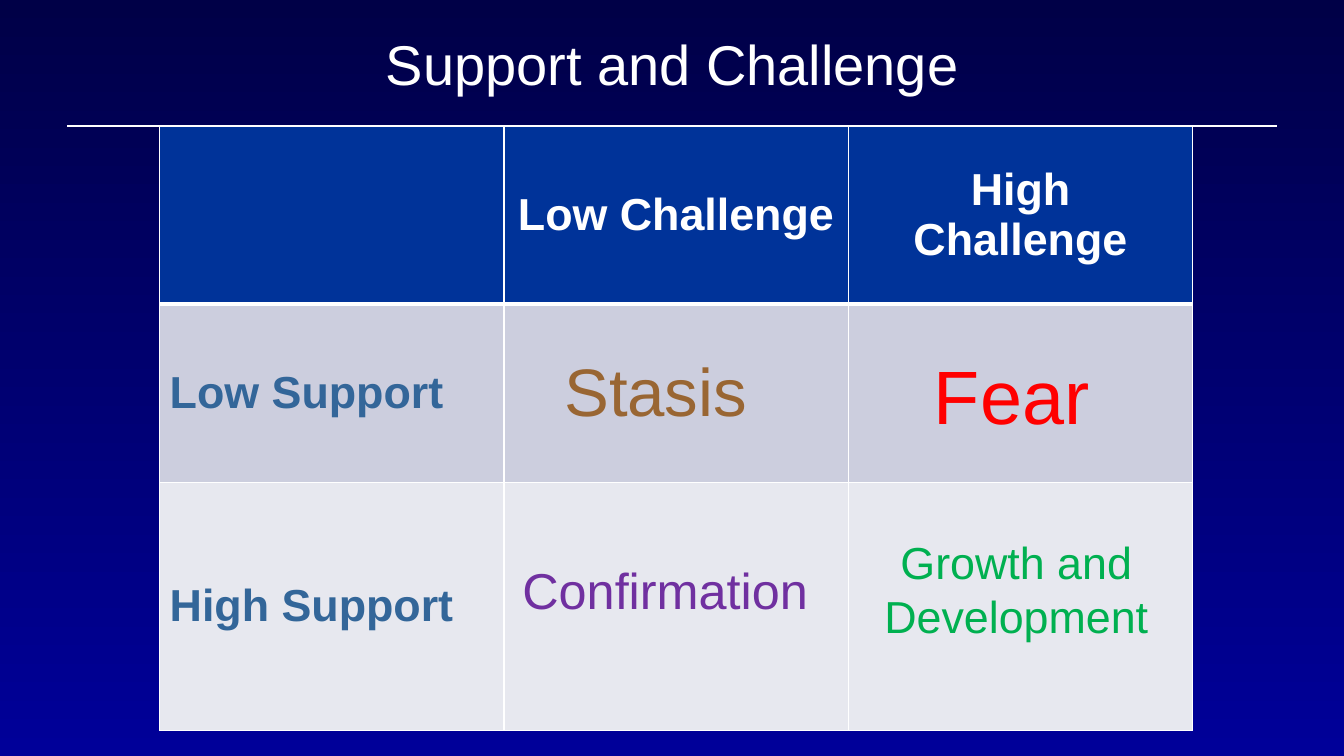
"""Build the Support and Challenge slide: a titled grid with four outcome labels."""
import dataclasses
import typing

import pptx
import pptx.dml.color
import pptx.enum.shapes
import pptx.enum.text
import pptx.oxml
import pptx.oxml.ns
import pptx.util

RGB = pptx.dml.color.RGBColor
ALIGN = pptx.enum.text.PP_ALIGN
ANCHOR = pptx.enum.text.MSO_ANCHOR

WHITE = RGB(0xFF, 0xFF, 0xFF)
NIGHT = RGB(0x00, 0x00, 0x47)
NAVY = RGB(0x00, 0x00, 0x99)
HEADER = RGB(0x00, 0x33, 0x99)
BAND_DARK = RGB(0xCC, 0xCE, 0xDE)
BAND_LIGHT = RGB(0xE7, 0xE8, 0xEF)
STEEL = RGB(0x33, 0x66, 0x99)
BROWN = RGB(0x99, 0x66, 0x33)
RED = RGB(0xFF, 0x00, 0x00)
PURPLE = RGB(0x70, 0x30, 0xA0)
GREEN = RGB(0x00, 0xB0, 0x50)

COLUMNS, ROWS = 160, 90
UNIT = pptx.util.Inches(7.5) / ROWS


@dataclasses.dataclass(frozen=True)
class Label:
    """Text box placed in grid columns and rows."""
    text: str
    col: float
    row: float
    cols: float
    rows: float
    size: int
    color: RGB
    align: ALIGN = ALIGN.LEFT
    anchor: ANCHOR = ANCHOR.TOP


@dataclasses.dataclass(frozen=True)
class Band:
    """Table row with its height in grid rows."""
    texts: tuple[str, str, str]
    rows: float
    fill: RGB
    color: RGB
    align: ALIGN
    top: int
    bottom: int


LABELS = (
    Label("Support and Challenge", 8, 0, 144, 15, 40, WHITE, ALIGN.CENTER, ANCHOR.MIDDLE),
    Label("Stasis", 66, 41, 29, 10.9, 48, BROWN),
    Label("Fear", 110, 41, 32, 12.1, 54, RED),
    Label("Confirmation", 61, 66, 39, 8.5, 36, PURPLE),
    Label("Growth and Development", 104, 63.1, 34, 14.2, 32, GREEN, ALIGN.CENTER),
)
BANDS = (
    Band(("", "Low Challenge", "High Challenge"), 21.2, HEADER, WHITE, ALIGN.CENTER, 1, 3),
    Band(("Low Support", "", ""), 21.2, BAND_DARK, STEEL, ALIGN.LEFT, 3, 1),
    Band(("High Support", "", ""), 29.6, BAND_LIGHT, STEEL, ALIGN.LEFT, 1, 1),
)


def grid(n: float) -> pptx.util.Emu:
    """Convert grid units to a length."""
    return pptx.util.Emu(round(n * UNIT))


def write(tf: typing.Any, text: str, color: RGB, align: ALIGN, **font: typing.Any) -> None:
    """Put one formatted run into a text frame."""
    p = tf.paragraphs[0]
    p.alignment = align
    r = p.add_run()
    r.text = text
    for name, value in {"name": "Arial", **font}.items():
        setattr(r.font, name, value)
    r.font.color.rgb = color


def add_label(s: typing.Any, label: Label) -> None:
    """Add a label as a text box."""
    sp = s.shapes.add_textbox(*map(grid, (label.col, label.row, label.cols, label.rows)))
    tf = sp.text_frame
    for name, value in {"word_wrap": True, "vertical_anchor": label.anchor}.items():
        setattr(tf, name, value)
    write(tf, label.text, label.color, label.align, size=pptx.util.Pt(label.size))


def set_borders(cell: typing.Any, widths: dict[str, int]) -> None:
    """Give a cell white borders of the given point widths."""
    tc_pr = cell._tc.get_or_add_tcPr()
    for i, (side, width) in enumerate(widths.items()):
        tc_pr.insert(i, pptx.oxml.parse_xml(
            f'<a:ln{side} {pptx.oxml.ns.nsdecls("a")} w="{pptx.util.Pt(width)}">'
            f'<a:solidFill><a:srgbClr val="{WHITE}"/></a:solidFill></a:ln{side}>'))


def add_matrix(s: typing.Any) -> None:
    """Add the support and challenge table."""
    height = sum(band.rows for band in BANDS)
    frame = s.shapes.add_table(len(BANDS), 3, *map(grid, (19, 15, 123, height)))
    table = frame.table
    table.horz_banding = False
    for column in table.columns:
        column.width = grid(41)
    for row, band in zip(table.rows, BANDS):
        row.height = grid(band.rows)
        for cell, text in zip(row.cells, band.texts):
            cell.vertical_anchor = ANCHOR.MIDDLE
            cell.fill.solid()
            cell.fill.fore_color.rgb = band.fill
            set_borders(cell, {"L": 1, "R": 1, "T": band.top, "B": band.bottom})
            if text:
                write(cell.text_frame, text, band.color, band.align,
                      size=pptx.util.Pt(32), bold=True)


def add_rule(s: typing.Any) -> None:
    """Add the line under the title."""
    sp = s.shapes.add_connector(pptx.enum.shapes.MSO_CONNECTOR.STRAIGHT,
                                *map(grid, (8, 15, 152, 15)))
    sp.line.color.rgb = WHITE
    sp.line.width = pptx.util.Pt(2)
    sp._element.spPr.append(pptx.oxml.parse_xml(
        f'<a:effectLst {pptx.oxml.ns.nsdecls("a")}/>'))


def main() -> None:
    """Build and save the slide."""
    prs = pptx.Presentation()
    prs.slide_width, prs.slide_height = grid(COLUMNS), grid(ROWS)
    s = prs.slides.add_slide(prs.slide_layouts[6])
    fill = s.background.fill
    fill.gradient()
    fill.gradient_angle = 270
    for stop, color in zip(fill.gradient_stops, (NIGHT, NAVY)):
        stop.color.rgb = color
    add_rule(s)
    add_matrix(s)
    for label in LABELS:
        add_label(s, label)
    prs.save("out.pptx")


if __name__ == "__main__":
    main()
